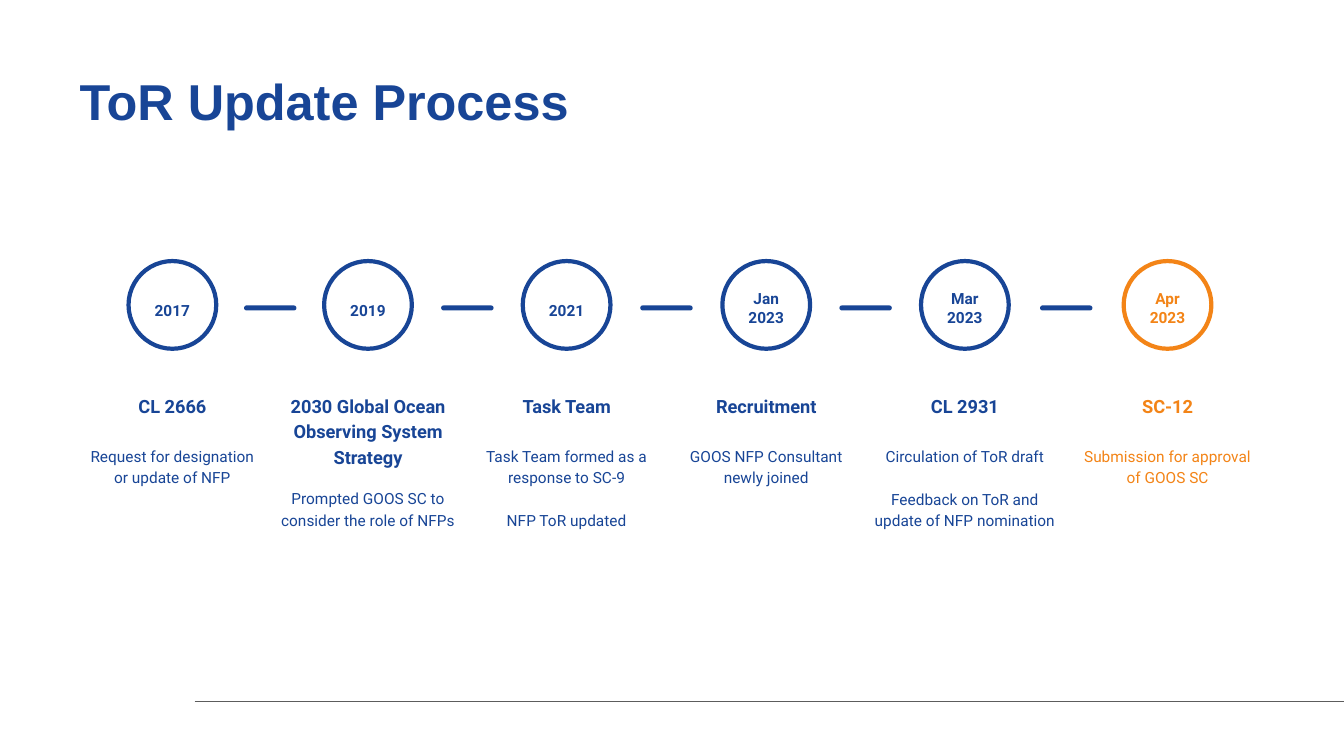
import pptx
import pptx.util
import pptx.dml.color
import pptx.enum.shapes
import pptx.enum.text
import pptx.oxml.ns
import lxml.etree

TITLE = "ToR Update Process"
MILESTONES = [
    {"center": 1.71, "date": ["2017"], "heading": "CL 2666", "width": 1.91,
     "details": ["Request for designation or update of NFP"]},
    {"center": 3.65, "date": ["2019"], "heading": "2030 Global Ocean Observing System Strategy",
     "width": 2.12, "heading_width": 1.91, "heading_drop": 0.5, "details_drop": 0.42,
     "details": ["Prompted GOOS SC to consider the role of NFPs"]},
    {"center": 5.62, "date": ["2021"], "heading": "Task Team", "width": 1.98,
     "details": ["Task Team formed as a response to SC-9", "NFP ToR updated"]},
    {"center": 7.6, "date": ["Jan", "2023"], "heading": "Recruitment", "width": 1.91,
     "details": ["GOOS NFP Consultant newly joined"]},
    {"center": 9.57, "date": ["Mar", "2023"], "heading": "CL 2931", "width": 2.18,
     "details": ["Circulation of ToR draft", "Feedback on ToR and update of NFP nomination"]},
    {"center": 11.58, "date": ["Apr", "2023"], "heading": "SC-12", "width": 1.98,
     "color": "orange", "details": ["Submission for approval of GOOS SC"]},
]
COLORS = {"blue": "184596", "orange": "F38417", "gray": "5C5C5C"}
WIDTH, HEIGHT = 13.33, 7.5
CIRCLE_TOP, CIRCLE_SIZE = 2.59, 0.87
DASH_TOP, DASH_WIDTH, DASH_HEIGHT = 3.03, 0.52, 0.05
DATE_WIDTH, DATE_HEIGHT = 0.64, 0.47
HEADING_TOP, HEADING_HEIGHT = 3.62, 0.65
DETAILS_TOP, DETAILS_HEIGHT = 4.28, 1.08
FOOTER_LEFT, FOOTER_TOP = 1.93, 6.96
INSET = 0.13

Inches, Pt = pptx.util.Inches, pptx.util.Pt
Anchor = pptx.enum.text.MSO_ANCHOR
Align = pptx.enum.text.PP_ALIGN
Shape = pptx.enum.shapes.MSO_SHAPE


def rgb(name):
    return pptx.dml.color.RGBColor.from_string(COLORS[name])


def apply(target, values):
    for name, value in values.items():
        setattr(target, name, value)


def format_frame(frame, inset, anchor):
    apply(frame, {
        "word_wrap": True, "auto_size": pptx.enum.text.MSO_AUTO_SIZE.NONE,
        "vertical_anchor": anchor,
        **{f"margin_{side}": Inches(inset) for side in ("left", "top", "right", "bottom")},
    })


def write(frame, lines, color, font, spacing=1.15, gap=0, align=Align.CENTER):
    for index, line in enumerate(lines):
        para = frame.paragraphs[0] if index == 0 else frame.add_paragraph()
        apply(para, {"alignment": align, "line_spacing": spacing,
                     "space_before": Pt(gap if index else 0)})
        span = para.add_run()
        span.text = line
        apply(span.font, font)
        span.font.color.rgb = rgb(color)


def add_text(page, center, top, width, height, lines, color, size, bold,
             anchor=Anchor.TOP, spacing=1.15, gap=0):
    box = page.shapes.add_textbox(
        Inches(center - width / 2), Inches(top), Inches(width), Inches(height))
    format_frame(box.text_frame, INSET, anchor)
    font = {"name": "Roboto", "size": Pt(size), "bold": bold}
    write(box.text_frame, lines, color, font, spacing, gap)


def add_mark(page, kind, center, top, width, height):
    mark = page.shapes.add_shape(
        kind, Inches(center - width / 2), Inches(top), Inches(width), Inches(height))
    mark.shadow.inherit = False
    return mark


def add_title(page):
    title = page.shapes.title
    apply(title, {"left": Inches(0.79), "top": Inches(0.79),
                  "width": Inches(11.76), "height": Inches(0.63)})
    format_frame(title.text_frame, 0, Anchor.TOP)
    font = {"name": "Arial", "size": Pt(36), "bold": True}
    write(title.text_frame, [TITLE], "blue", font, 0.85, align=Align.LEFT)


def add_footer_line(page):
    line = page.shapes.add_connector(
        pptx.enum.shapes.MSO_CONNECTOR.STRAIGHT, Inches(FOOTER_LEFT), Inches(FOOTER_TOP),
        Inches(WIDTH), Inches(FOOTER_TOP))
    line.line.color.rgb = rgb("gray")
    line.line.width = Pt(0.75)
    lxml.etree.SubElement(line.element.spPr, pptx.oxml.ns.qn("a:effectLst"))


def add_milestone(page, item):
    center, color = item["center"], item.get("color", "blue")
    circle = add_mark(page, Shape.OVAL, center, CIRCLE_TOP, CIRCLE_SIZE, CIRCLE_SIZE)
    circle.fill.background()
    circle.line.color.rgb = rgb(color)
    circle.line.width = Pt(3)
    single = len(item["date"]) == 1
    add_text(page, center, 2.83 if single else 2.74, DATE_WIDTH, DATE_HEIGHT,
             item["date"], color, 11, True, spacing=1.15 if single else 1.0)
    add_text(page, center, HEADING_TOP + item.get("heading_drop", 0),
             item.get("heading_width", item["width"]), HEADING_HEIGHT,
             [item["heading"]], color, 13, True, Anchor.BOTTOM)
    add_text(page, center, DETAILS_TOP + item.get("details_drop", 0), item["width"],
             DETAILS_HEIGHT, item["details"], color, 11, False, gap=15.4)


def add_dash(page, before, after):
    center = (before["center"] + after["center"]) / 2
    dash = add_mark(page, Shape.ROUNDED_RECTANGLE, center, DASH_TOP, DASH_WIDTH, DASH_HEIGHT)
    dash.adjustments[0] = 0.5
    dash.fill.solid()
    dash.fill.fore_color.rgb = rgb("blue")
    dash.line.fill.background()


def main():
    deck = pptx.Presentation()
    deck.slide_width, deck.slide_height = Inches(WIDTH), Inches(HEIGHT)
    page = deck.slides.add_slide(deck.slide_layouts[5])
    add_footer_line(page)
    add_title(page)
    for item in MILESTONES:
        add_milestone(page, item)
    for before, after in zip(MILESTONES, MILESTONES[1:]):
        add_dash(page, before, after)
    deck.save("out.pptx")


if __name__ == "__main__":
    main()
